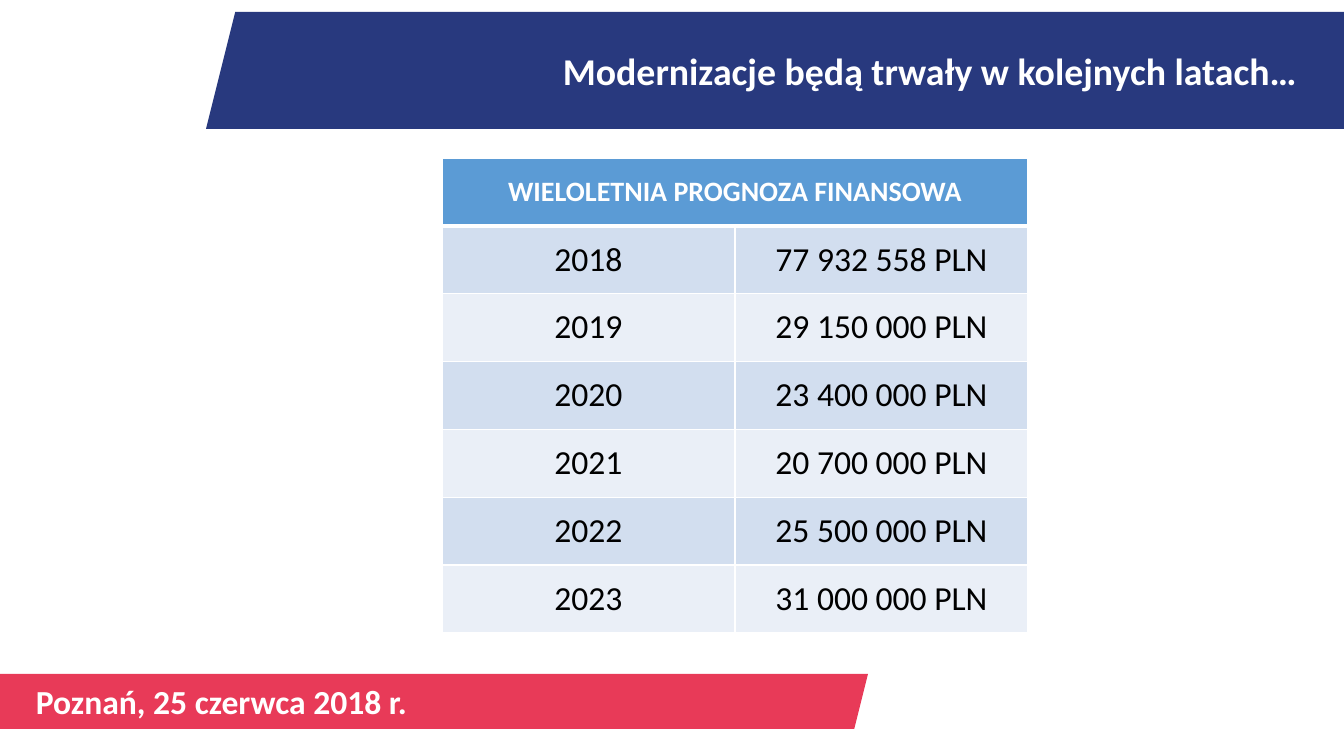
from lxml.etree import SubElement
from pptx import Presentation
from pptx.dml.color import RGBColor
from pptx.enum.shapes import MSO_SHAPE as Shape
from pptx.enum.text import MSO_ANCHOR as Anchor, MSO_AUTO_SIZE as AutoSize, PP_ALIGN as Align
from pptx.oxml.ns import qn
from pptx.util import Pt

PX = 12192000 / 1344
WHITE = "FFFFFF"
HEADER = "WIELOLETNIA PROGNOZA FINANSOWA"
FORECAST = [
    ("2018", "77 932 558 PLN"),
    ("2019", "29 150 000 PLN"),
    ("2020", "23 400 000 PLN"),
    ("2021", "20 700 000 PLN"),
    ("2022", "25 500 000 PLN"),
    ("2023", "31 000 000 PLN"),
]


def paint(color_format, value):
    color_format.rgb = RGBColor.from_string(value)


def write(frame, text, size, color, bold, align):
    para = frame.paragraphs[0]
    para.alignment = align
    span = para.add_run()
    span.text = text
    for name, value in {"name": "Calibri", "size": Pt(size), "bold": bold}.items():
        setattr(span.font, name, value)
    paint(span.font.color, color)


deck = Presentation()
deck.slide_width, deck.slide_height = round(1344 * PX), round(756 * PX)
page = deck.slides.add_slide(deck.slide_layouts[5])
title = page.shapes.title

for bounds, color in [((206, 12, 1216, 117), "28397E"), ((-348, 674, 1216, 55), "E83A58")]:
    banner = page.shapes.add_shape(Shape.PARALLELOGRAM, *[round(n * PX) for n in bounds])
    banner.shadow.inherit = False
    banner.fill.solid()
    paint(banner.fill.fore_color, color)
    banner.line.fill.background()

page.shapes._spTree.append(title._element)
for name, value in {"left": 240, "top": 12, "width": 1067, "height": 117}.items():
    setattr(title, name, round(value * PX))
title.text_frame.auto_size = AutoSize.NONE
title.text_frame.vertical_anchor = Anchor.MIDDLE
write(title.text_frame, "Modernizacje będą trwały w kolejnych latach…", 27, WHITE, True, Align.RIGHT)

place_date = page.shapes.add_textbox(*[round(n * PX) for n in (26, 676, 597, 51)])
place_date.text_frame.word_wrap = True
write(place_date.text_frame, "Poznań, 25 czerwca 2018 r.", 24, WHITE, True, Align.LEFT)

rows = [(HEADER, "")] + FORECAST
bounds = [round(n * PX) for n in (442, 158, 586, 475)]
table = page.shapes.add_table(len(rows), 2, *bounds).table
table.cell(0, 0).merge(table.cell(0, 1))
for row_index, values in enumerate(rows):
    is_header = row_index == 0
    for column_index, value in enumerate(values):
        cell = table.cell(row_index, column_index)
        cell.vertical_anchor = Anchor.MIDDLE
        properties = cell._tc.get_or_add_tcPr()
        widths = {"L": 1, "R": 1, "T": 3 if row_index == 1 else 1, "B": 3 if is_header else 1}
        for side, width in widths.items():
            border = SubElement(properties, qn(f"a:ln{side}"), w=str(Pt(width)))
            SubElement(SubElement(border, qn("a:solidFill")), qn("a:srgbClr"), val=WHITE)
        cell.fill.solid()
        paint(cell.fill.fore_color, "5B9BD5" if is_header else ("EAEFF7", "D2DEEF")[row_index % 2])
        if value:
            write(cell.text_frame, value, 20 if is_header else 24,
                  WHITE if is_header else "000000", is_header, Align.CENTER)

deck.save("out.pptx")
